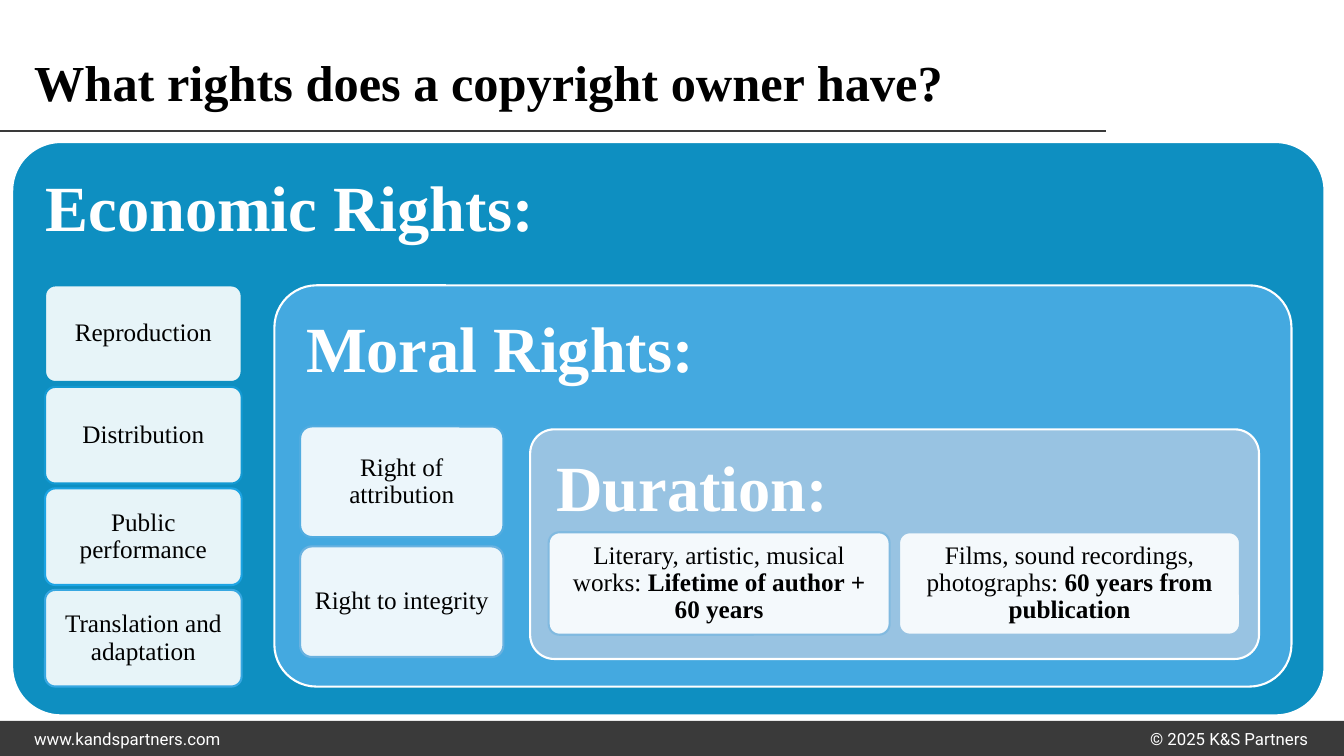
from lxml import etree
from pptx import Presentation
from pptx.dml.color import RGBColor
from pptx.enum import shapes as sh, text as tx
from pptx.oxml import ns
from pptx.util import Pt

WHITE = RGBColor(0xFF, 0xFF, 0xFF)
BLACK = RGBColor(0x00, 0x00, 0x00)
CHARCOAL = RGBColor(0x3A, 0x3A, 0x3A)
ECONOMIC_BLUE = RGBColor(0x0E, 0x8F, 0xC1)
MORAL_BLUE = RGBColor(0x44, 0xA9, 0xE0)
DURATION_BLUE = RGBColor(0x98, 0xC3, 0xE2)

SERIF = "Times New Roman"
SANS = "Roboto"
LEFT, CENTER = tx.PP_ALIGN.LEFT, tx.PP_ALIGN.CENTER
TOP, MIDDLE = tx.MSO_ANCHOR.TOP, tx.MSO_ANCHOR.MIDDLE

# Each card: runs of (words, bold), then the border colour
ECONOMIC_CARDS = [
    ([("Reproduction", False)], ECONOMIC_BLUE),
    ([("Distribution", False)], RGBColor(0x14, 0x9A, 0xD3)),
    ([("Public performance", False)], RGBColor(0x1D, 0xA4, 0xE3)),
    ([("Translation and adaptation", False)], RGBColor(0x37, 0xA7, 0xE1)),
]
MORAL_CARDS = [
    ([("Right of attribution", False)], RGBColor(0x51, 0xAC, 0xE0)),
    ([("Right to integrity", False)], RGBColor(0x6A, 0xB2, 0xE0)),
]
DURATION_CARDS = [
    ([("Literary, artistic, musical works: ", False),
      ("Lifetime of author + 60 years", True)], RGBColor(0x81, 0xBA, 0xE0)),
    ([("Films, sound recordings, photographs: ", False),
      ("60 years from publication", True)], DURATION_BLUE),
]


def write(frame, runs, size, color, font=SERIF, align=LEFT, anchor=MIDDLE,
          inset=None, spacing=0.9):
    frame.word_wrap = True
    frame.vertical_anchor = anchor
    if inset is not None:
        frame.margin_left = frame.margin_right = Pt(inset)
        frame.margin_top = frame.margin_bottom = Pt(inset)
    paragraph = frame.paragraphs[0]
    paragraph.alignment = align
    paragraph.line_spacing = spacing
    for words, bold in runs:
        run = paragraph.add_run()
        run.text = words
        run.font.name = font
        run.font.size = Pt(size)
        run.font.bold = bold
        run.font.color.rgb = color


def add_label(slide, box, words, size, color, bold=False, **style):
    label = slide.shapes.add_textbox(*map(Pt, box))
    write(label.text_frame, [(words, bold)], size, color, **style)


def add_block(slide, kind, box, fill, border=None):
    block = slide.shapes.add_shape(kind, *map(Pt, box))
    block.shadow.inherit = False
    block.fill.solid()
    block.fill.fore_color.rgb = fill
    if border is None:
        block.line.fill.background()
    else:
        block.line.color.rgb = border
        block.line.width = Pt(1.5)
    return block


def add_panel(slide, box, fill, heading, rounding=0.105):
    panel = add_block(slide, sh.MSO_SHAPE.ROUNDED_RECTANGLE, box, fill, WHITE)
    panel.adjustments[0] = rounding
    write(panel.text_frame, [(heading, True)], 46, WHITE, anchor=TOP, inset=13.8)


def add_cards(slide, cards, first_box, step_x=0, step_y=0):
    left, top, width, height = first_box
    for i, (runs, border) in enumerate(cards):
        box = (left + i * step_x, top + i * step_y, width, height)
        card = add_block(slide, sh.MSO_SHAPE.ROUNDED_RECTANGLE, box, WHITE, border)
        card.adjustments[0] = 0.105
        # 90 % opaque white lets the panel colour tint the card
        solid = card.fill._xPr.find(ns.qn("a:solidFill"))
        etree.SubElement(solid[0], ns.qn("a:alpha"), val="90000")
        write(card.text_frame, runs, 18, BLACK, align=CENTER, inset=5)


def add_rule(slide, x1, x2, y):
    rule = slide.shapes.add_connector(
        sh.MSO_CONNECTOR.STRAIGHT, Pt(x1), Pt(y), Pt(x2), Pt(y))
    rule.line.color.rgb = CHARCOAL
    rule.line.width = Pt(1)
    etree.SubElement(rule._element.spPr, ns.qn("a:effectLst"))


def main():
    deck = Presentation()
    deck.slide_width, deck.slide_height = Pt(960), Pt(540)
    slide = deck.slides.add_slide(deck.slide_layouts[6])

    # Footer
    add_block(slide, sh.MSO_SHAPE.RECTANGLE, (0, 515, 960, 25), CHARCOAL)
    add_label(slide, (17.3, 515, 164, 25), "www.kandspartners.com", 12, WHITE,
              font=SANS, spacing=1)
    add_label(slide, (805, 515.3, 146, 25), "© 2025 K&S Partners", 12, WHITE,
              font=SANS, align=CENTER, spacing=1)

    # Title
    add_rule(slide, 0, 790, 93.6)
    add_label(slide, (17.3, 28.8, 772.6, 64.8),
              "What rights does a copyright owner have?", 36, BLACK, bold=True)

    # Economic rights
    add_panel(slide, (8.7, 101.5, 937.4, 409.5), ECONOMIC_BLUE,
              "Economic Rights:", rounding=0.085)
    add_cards(slide, ECONOMIC_CARDS, (32.2, 203.9, 140.4, 69), step_y=72.5)

    # Moral rights
    add_panel(slide, (196, 203.8, 726.5, 286.6), MORAL_BLUE, "Moral Rights:")
    add_cards(slide, MORAL_CARDS, (214.4, 304.6, 145.2, 79), step_y=85.7)

    # Duration
    add_panel(slide, (378.7, 306.7, 520.6, 164), DURATION_BLUE, "Duration:")
    add_cards(slide, DURATION_CARDS, (391.9, 380.2, 243.6, 73.2), step_x=250.3)

    deck.save("out.pptx")


if __name__ == "__main__":
    main()
